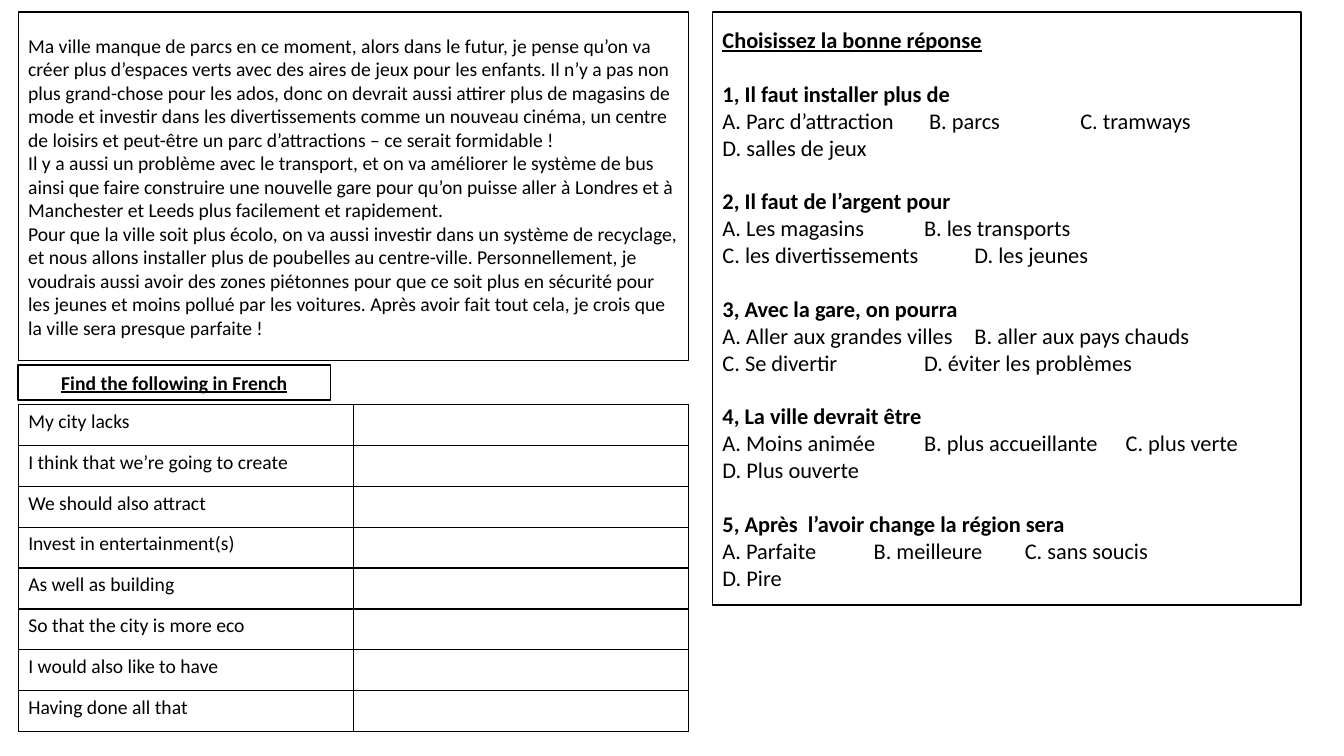
import pptx
import pptx.dml.color
import pptx.enum.shapes
import pptx.enum.text
import pptx.oxml
import pptx.oxml.ns
import pptx.util

Pt = pptx.util.Pt
COLOURS = {"ink": "000000", "paper": "FFFFFF"}

LEFT, TOP, LEFT_WIDTH = 13, 8.64, 478.8

PASSAGE = [
    "Ma ville manque de parcs en ce moment, alors dans le futur, je pense qu’on va créer plus "
    "d’espaces verts avec des aires de jeux pour les enfants. Il n’y a pas non plus grand-chose "
    "pour les ados, donc on devrait aussi attirer plus de magasins de mode et investir dans les "
    "divertissements comme un nouveau cinéma, un centre de loisirs et peut-être un parc "
    "d’attractions – ce serait formidable !",
    "Il y a aussi un problème avec le transport, et on va améliorer le système de bus ainsi que "
    "faire construire une nouvelle gare pour qu’on puisse aller à Londres et à Manchester et "
    "Leeds plus facilement et rapidement.",
    "Pour que la ville soit plus écolo, on va aussi investir dans un système de recyclage, et "
    "nous allons installer plus de poubelles au centre-ville. Personnellement, je voudrais aussi "
    "avoir des zones piétonnes pour que ce soit plus en sécurité pour les jeunes et moins pollué "
    "par les voitures. Après avoir fait tout cela, je crois que la ville sera presque parfaite !",
]

PHRASES = [
    "My city lacks",
    "I think that we’re going to create",
    "We should also attract",
    "Invest in entertainment(s)",
    "As well as building",
    "So that the city is more eco",
    "I would also like to have",
    "Having done all that",
]

QUESTIONS = [
    ("1, Il faut installer plus de",
     "A. Parc d’attraction\t B. parcs\t\t C. tramways", "D. salles de jeux"),
    ("2, Il faut de l’argent pour",
     "A. Les magasins\t\tB. les transports", "C. les divertissements\t\tD. les jeunes"),
    ("3, Avec la gare, on pourra",
     "A. Aller aux grandes villes\tB. aller aux pays chauds",
     "C. Se divertir\t\tD. éviter les problèmes"),
    ("4, La ville devrait être",
     "A. Moins animée\tB. plus accueillante \tC. plus verte", "D. Plus ouverte"),
    ("5, Après  l’avoir change la région sera",
     "A. Parfaite\t\tB. meilleure\tC. sans soucis", "D. Pire"),
]


class Worksheet:
    """Holds the text style and the current slide, and draws its boxes and tables."""

    def __init__(self, slide, font="Calibri"):
        self.slide = slide
        self.font = font

    def colour(self, name):
        return pptx.dml.color.RGBColor.from_string(COLOURS[name])

    def set_text(self, paragraph, text, size, bold=False, underline=False, centred=False, gap=0):
        paragraph.text = text
        align = pptx.enum.text.PP_ALIGN
        paragraph.alignment = align.CENTER if centred else align.LEFT
        paragraph.space_before = Pt(gap)
        for run in paragraph.runs:
            run.font.name = self.font
            run.font.size = Pt(size)
            run.font.bold = bold
            run.font.underline = underline
            run.font.color.rgb = self.colour("ink")

    def box(self, left, top, width, height, lines, size):
        shape = self.slide.shapes.add_shape(
            pptx.enum.shapes.MSO_SHAPE.RECTANGLE, Pt(left), Pt(top), Pt(width), Pt(height))
        shape.shadow.inherit = False
        shape.fill.solid()
        shape.fill.fore_color.rgb = self.colour("paper")
        shape.line.color.rgb = self.colour("ink")
        shape.line.width = Pt(1)
        frame = shape.text_frame
        frame.word_wrap = True
        frame.vertical_anchor = pptx.enum.text.MSO_ANCHOR.MIDDLE
        for index, (text, style) in enumerate(lines):
            paragraph = frame.add_paragraph() if index else frame.paragraphs[0]
            self.set_text(paragraph, text, size, **style)

    def border(self, cell):
        properties = cell._tc.get_or_add_tcPr()
        for position, side in enumerate(("lnL", "lnR", "lnT", "lnB")):
            line = pptx.oxml.parse_xml(
                f'<a:{side} {pptx.oxml.ns.nsdecls("a")} w="{Pt(1)}"><a:solidFill>'
                f'<a:srgbClr val="{COLOURS["ink"]}"/></a:solidFill></a:{side}>')
            properties.insert(position, line)

    def answer_table(self, left, top, width, row_height, phrases, size):
        table = self.slide.shapes.add_table(
            len(phrases), 2, Pt(left), Pt(top), Pt(width), Pt(row_height * len(phrases))).table
        table.first_row = False
        table.horz_banding = False
        for row, phrase in zip(table.rows, phrases):
            row.height = Pt(row_height)
            for cell, text in zip(row.cells, (phrase, "")):
                self.set_text(cell.text_frame.paragraphs[0], text, size)
                cell.fill.background()
                self.border(cell)


def main():
    presentation = pptx.Presentation()
    presentation.slide_width = Pt(960)
    presentation.slide_height = Pt(540)
    slide = presentation.slides.add_slide(presentation.slide_layouts[6])
    worksheet = Worksheet(slide)

    worksheet.box(LEFT, TOP, LEFT_WIDTH, 249, [(text, {}) for text in PASSAGE], 14)
    worksheet.answer_table(LEFT, 289, LEFT_WIDTH, 29.16, PHRASES, 14)
    heading = {"bold": True, "underline": True}
    worksheet.box(LEFT, 260.6, 223.2, 25.2,
                  [("Find the following in French", {**heading, "centred": True})], 14)

    quiz = [("Choisissez la bonne réponse", heading)]
    for question, *choices in QUESTIONS:
        quiz.append((question, {"bold": True, "gap": 19.2}))
        quiz.extend((choice, {}) for choice in choices)
    worksheet.box(509, TOP, 420.5, 423.4, quiz, 16)

    presentation.save("out.pptx")


if __name__ == "__main__":
    main()
